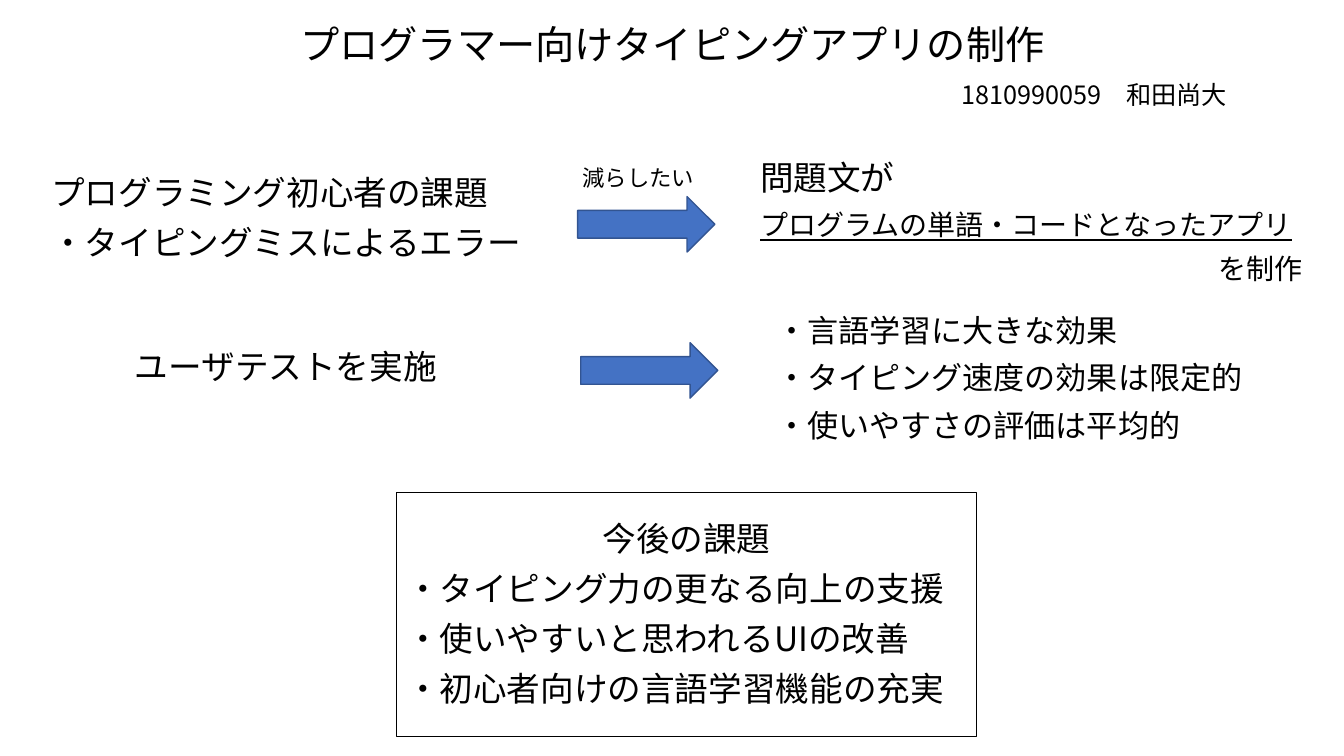
from lxml import etree
from pptx import Presentation
from pptx.dml.color import RGBColor
from pptx.enum.shapes import MSO_SHAPE
from pptx.enum.text import MSO_ANCHOR, PP_ALIGN
from pptx.oxml.ns import qn
from pptx.util import Inches, Pt

LEFT, CENTER, RIGHT = PP_ALIGN.LEFT, PP_ALIGN.CENTER, PP_ALIGN.RIGHT
TOP, MIDDLE = MSO_ANCHOR.TOP, MSO_ANCHOR.MIDDLE
RECTANGLE, RIGHT_ARROW = MSO_SHAPE.RECTANGLE, MSO_SHAPE.RIGHT_ARROW


def color(value):
    return RGBColor.from_string(value)


class SlideBuilder:
    FONT = "Noto Sans CJK JP"
    TEXT = "000000"
    ARROW_FILL = "4472C4"
    ARROW_LINE = "325491"

    def __init__(self, slide):
        self.slide = slide

    def paragraph(self, frame, text, size, align=LEFT, spacing=0.9, before=10,
                  underline=False):
        """Fill the frame's empty first paragraph, or append a new one."""
        first = frame.paragraphs[0]
        paragraph = frame.add_paragraph() if first.runs else first
        paragraph.alignment = align
        paragraph.line_spacing = spacing
        paragraph.space_before = Pt(before)
        run = paragraph.add_run()
        run.text = text
        font = run.font
        font.name = self.FONT
        font.size = Pt(size)
        font.underline = underline
        font.color.rgb = color(self.TEXT)
        east_asian = etree.SubElement(font._element, qn("a:ea"))
        east_asian.set("typeface", self.FONT)

    def text_box(self, left, top, width, height, anchor=TOP):
        box = self.slide.shapes.add_textbox(
            Inches(left), Inches(top), Inches(width), Inches(height))
        frame = box.text_frame
        frame.word_wrap = True
        frame.vertical_anchor = anchor
        return frame

    def lines(self, frame, texts, size):
        for text in texts:
            self.paragraph(frame, text, size)

    def shape(self, kind, left, top, width, height, line, line_width, fill=None):
        shape = self.slide.shapes.add_shape(
            kind, Inches(left), Inches(top), Inches(width), Inches(height))
        shape.shadow.inherit = False
        if fill:
            shape.fill.solid()
            shape.fill.fore_color.rgb = color(fill)
        else:
            shape.fill.background()
        shape.line.color.rgb = color(line)
        shape.line.width = Pt(line_width)
        return shape

    def arrow(self, left, top):
        self.shape(RIGHT_ARROW, left, top, 1.36, 0.55,
                   self.ARROW_LINE, 1, self.ARROW_FILL)

    def framed_text(self, left, top, width, height):
        frame = self.shape(RECTANGLE, left, top, width, height,
                           self.TEXT, 0.75).text_frame
        frame.word_wrap = True
        frame.vertical_anchor = TOP
        return frame


def main():
    presentation = Presentation()
    presentation.slide_width = Inches(13.33)
    presentation.slide_height = Inches(7.5)
    builder = SlideBuilder(
        presentation.slides.add_slide(presentation.slide_layouts[6]))

    title = builder.text_box(0.92, 0.19, 11.5, 0.55, MIDDLE)
    builder.paragraph(title, "プログラマー向けタイピングアプリの制作", 28, CENTER, before=0)
    author = builder.text_box(9.11, 0.74, 3.16, 0.4)
    builder.paragraph(author, "1810990059　和田尚大", 18, RIGHT, 1.0, 0)

    problem = builder.text_box(0.41, 1.7, 4.87, 1.06)
    builder.lines(problem, ["プログラミング初心者の課題",
                            "・タイピングミスによるエラー"], 24)
    builder.arrow(5.73, 1.95)
    arrow_label = builder.text_box(5.68, 1.58, 1.36, 0.37)
    builder.paragraph(arrow_label, "減らしたい", 16, spacing=1.0, before=0)
    solution = builder.text_box(7.44, 1.55, 5.58, 1.36)
    builder.paragraph(solution, "問題文が", 24)
    builder.paragraph(solution, "プログラムの単語・コードとなったアプリ", 20, underline=True)
    builder.paragraph(solution, "を制作", 20, RIGHT)

    user_test = builder.text_box(1.24, 3.43, 4.04, 0.57)
    builder.paragraph(user_test, "ユーザテストを実施", 24)
    builder.arrow(5.76, 3.4)
    results = builder.text_box(7.6, 3.08, 4.87, 1.63)
    builder.lines(results, ["・言語学習に大きな効果",
                            "・タイピング速度の効果は限定的",
                            "・使いやすさの評価は平均的"], 22.2)

    future_work = builder.framed_text(3.93, 4.89, 5.76, 2.42)
    builder.paragraph(future_work, "今後の課題", 24, CENTER, 1.5)
    builder.lines(future_work, ["・タイピング力の更なる向上の支援",
                                "・使いやすいと思われるUIの改善",
                                "・初心者向けの言語学習機能の充実"], 24)

    presentation.save("out.pptx")


if __name__ == "__main__":
    main()
